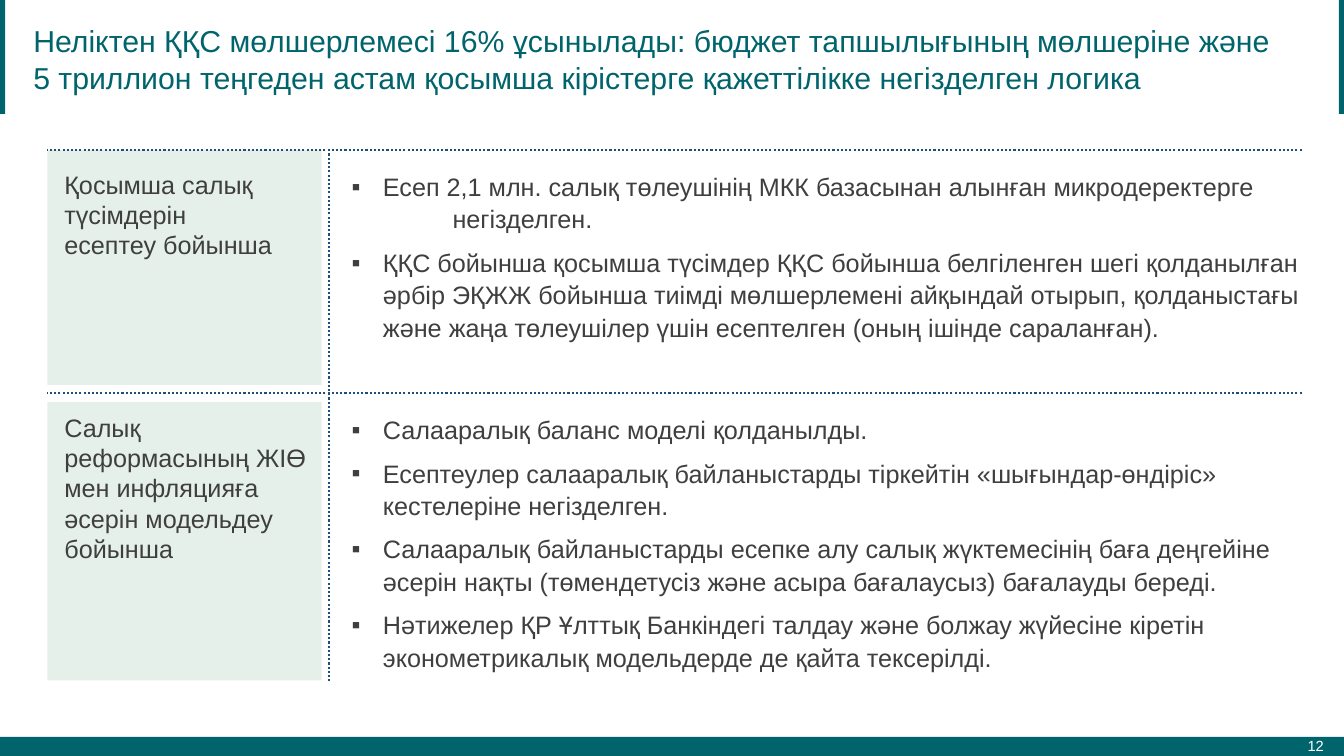
from lxml.etree import SubElement
from pptx import Presentation
from pptx.dml.color import RGBColor
from pptx.enum.dml import MSO_LINE
from pptx.enum.shapes import MSO_CONNECTOR, MSO_SHAPE
from pptx.enum.text import MSO_ANCHOR, MSO_AUTO_SIZE, PP_ALIGN
from pptx.oxml.ns import qn
from pptx.util import Inches, Pt

# Content
TITLE = ("Неліктен ҚҚС мөлшерлемесі 16% ұсынылады: бюджет тапшылығының мөлшеріне және "
         "5 триллион теңгеден астам қосымша кірістерге қажеттілікке негізделген логика")
PAGE = "12"
ROWS = [
    {"panel": (1.49, 2.33), "top": 1.63, "high": (1.01, 1.82),
     "label": ["Қосымша салық түсімдерін", "есептеу бойынша"],
     "points": [
         "Есеп 2,1 млн. салық төлеушінің МКК базасынан алынған микродеректерге\v\tнегізделген.",
         "ҚҚС бойынша қосымша түсімдер ҚҚС бойынша белгіленген шегі қолданылған "
         "әрбір ЭҚЖЖ бойынша тиімді мөлшерлемені айқындай отырып, қолданыстағы "
         "және жаңа төлеушілер үшін есептелген (оның ішінде сараланған)."]},
    {"panel": (3.99, 2.76), "top": 4.04, "high": (1.62, 2.92),
     "label": ["Салық реформасының ЖІӨ мен инфляцияға әсерін модельдеу бойынша"],
     "points": [
         "Салааралық баланс моделі қолданылды.",
         "Есептеулер салааралық байланыстарды тіркейтін «шығындар-өндіріс» "
         "кестелеріне негізделген.",
         "Салааралық байланыстарды есепке алу салық жүктемесінің баға деңгейіне "
         "әсерін нақты (төмендетусіз және асыра бағалаусыз) бағалауды береді.",
         "Нәтижелер ҚР Ұлттық Банкіндегі талдау және болжау жүйесіне кіретін "
         "эконометрикалық модельдерде де қайта тексерілді."]},
]
COLORS = {"teal": "00646C", "mint": "E6F0EB", "text": "3F3F3F",
          "rule": "1F4E79", "white": "FFFFFF"}
FONT = "Arial"
WIDE, TALL = 13.33, 7.5
LEFT, RIGHT, SPLIT = 0.47, 12.91, 3.26
TOP, MID, END = 1.49, 3.9, 6.76


def color(name):
    return RGBColor.from_string(COLORS[name])


def add_rect(slide, box, fill):
    rect = slide.shapes.add_shape(MSO_SHAPE.RECTANGLE, *map(Inches, box))
    rect.shadow.inherit = False
    rect.fill.solid()
    rect.fill.fore_color.rgb = color(fill)
    rect.line.fill.background()


def add_rule(slide, *ends):
    rule = slide.shapes.add_connector(MSO_CONNECTOR.STRAIGHT, *map(Inches, ends))
    rule.line.color.rgb = color("rule")
    rule.line.width = Pt(1.5)
    rule.line.dash_style = MSO_LINE.ROUND_DOT
    SubElement(rule._element.spPr, qn("a:effectLst"))


def style(para, size, tint):
    for run in para.runs:
        run.font.name = FONT
        run.font.size = Pt(size)
        run.font.color.rgb = color(tint)


def add_text(slide, box, lines, size=18, tint="text"):
    frame = slide.shapes.add_textbox(*map(Inches, box)).text_frame
    frame.word_wrap = True
    frame.text = "\n".join(lines)
    for para in frame.paragraphs:
        style(para, size, tint)
    return frame


def add_bullet(para):
    props = para._p.get_or_add_pPr()
    props.set("marL", str(Inches(0.31)))
    props.set("indent", str(-Inches(0.31)))
    SubElement(props, qn("a:buFont"), typeface=FONT)
    SubElement(props, qn("a:buChar"), char="▪")
    tabs = SubElement(props, qn("a:tabLst"))
    SubElement(tabs, qn("a:tab"), pos=str(Inches(1)), algn="l")
    para.line_spacing = 1.07
    para.space_after = Pt(8)


def main():
    deck = Presentation()
    deck.slide_width, deck.slide_height = Inches(WIDE), Inches(TALL)
    slide = deck.slides.add_slide(deck.slide_layouts[5])

    # Frame bars and page number
    add_rect(slide, (0, 7.31, WIDE, 0.19), "teal")
    for x in (0, WIDE - 0.05):
        add_rect(slide, (x, 0, 0.05, 1.13), "teal")
    page = add_text(slide, (11.92, 7.2, 1.29, 0.4), [PAGE], 10.5, "white")
    page.vertical_anchor = MSO_ANCHOR.MIDDLE
    page.margin_left = page.margin_right = Inches(0.08)
    page.margin_top = page.margin_bottom = Inches(0.04)
    page.paragraphs[0].alignment = PP_ALIGN.RIGHT

    # Title
    title = slide.shapes.title
    title.left, title.top, title.width, title.height = map(Inches, (0.23, 0.2, 12.55, 0.77))
    frame = title.text_frame
    frame.text = TITLE
    frame.word_wrap = True
    frame.auto_size = MSO_AUTO_SIZE.NONE
    frame.vertical_anchor = MSO_ANCHOR.MIDDLE
    frame.paragraphs[0].alignment = PP_ALIGN.LEFT
    style(frame.paragraphs[0], 21.6, "teal")

    # Rows: label panel and bullet list
    for row in ROWS:
        y, high = row["panel"]
        add_rect(slide, (LEFT, y, 2.72, high), "mint")
        short, long = row["high"]
        add_text(slide, (0.54, row["top"], 2.64, short), row["label"])
        points = add_text(slide, (3.39, row["top"], 9.68, long), row["points"])
        for para in points.paragraphs:
            add_bullet(para)

    # Dotted rules
    for y in (TOP, MID):
        add_rule(slide, RIGHT, y, LEFT, y)
    add_rule(slide, SPLIT, END, SPLIT, TOP)

    deck.save("out.pptx")


if __name__ == "__main__":
    main()
